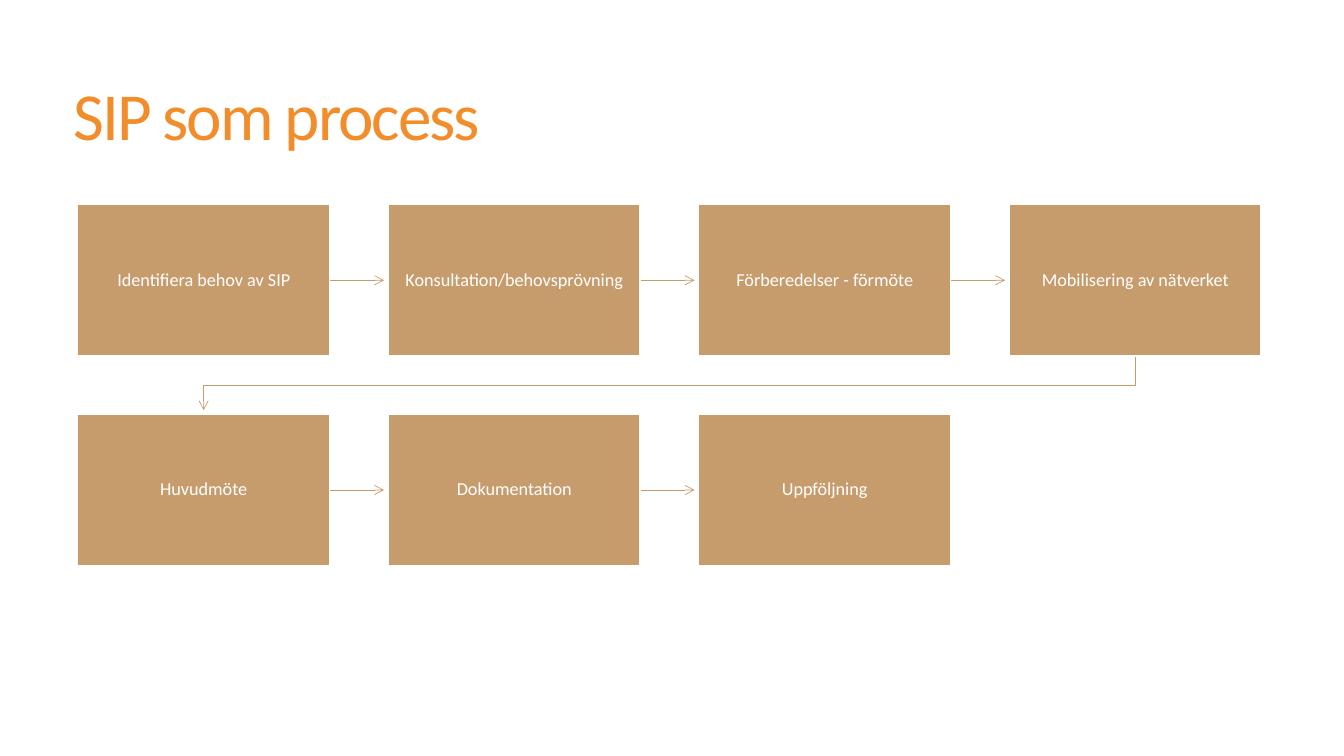
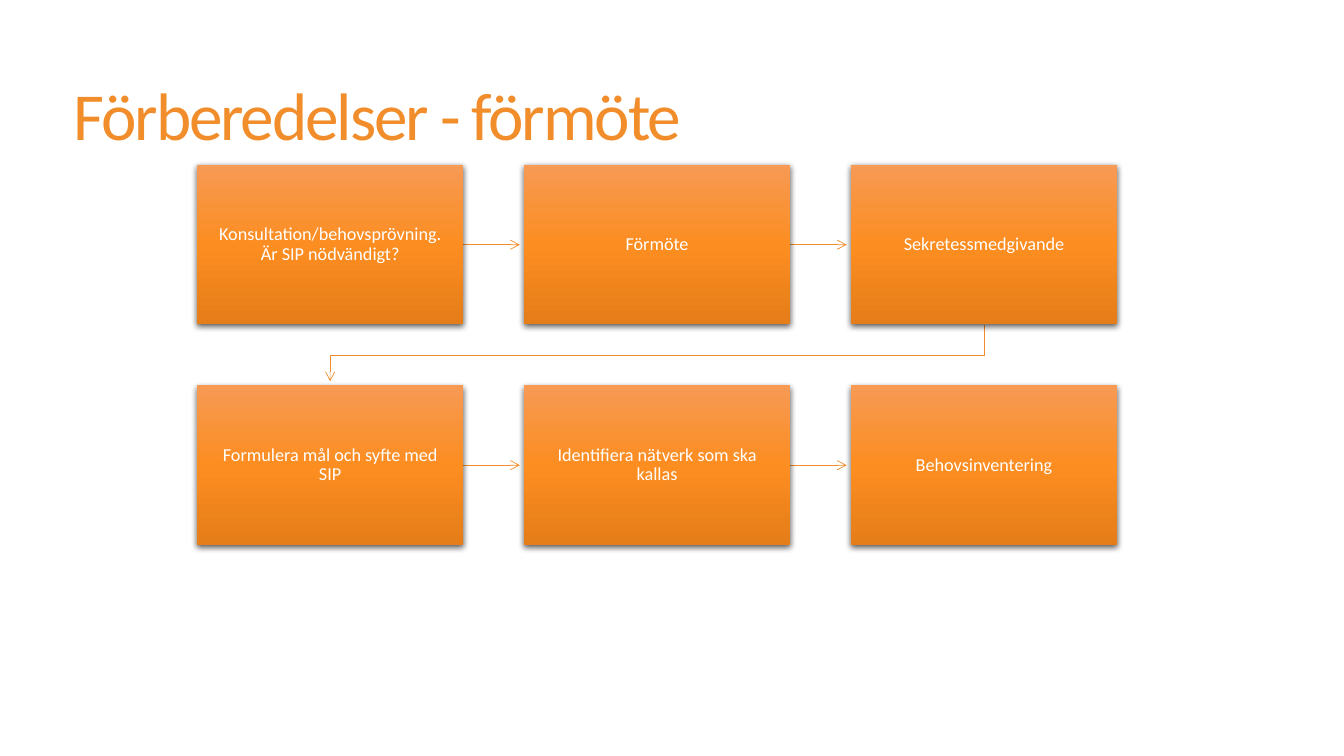
from dataclasses import dataclass

from lxml import etree
from pptx import Presentation
from pptx.dml.color import RGBColor
from pptx.enum import shapes, text
from pptx.oxml.ns import qn
from pptx.util import Pt

FONT = "Calibri"
ORANGE, TAN, WHITE = "F28D2B", "C79C6D", "FFFFFF"
ORANGE_STOPS = ((0, "F69A54"), (50, "FC8D21"), (100, "E57D18"))
ARROW_GAP = 3


@dataclass
class Grid:
    """Boxes of one size in rows of equal pitch, in points."""
    left: float
    top: float
    width: float
    height: float
    pitch_x: float
    pitch_y: float
    columns: int

    def corner(self, index):
        row, column = divmod(index, self.columns)
        return self.left + column * self.pitch_x, self.top + row * self.pitch_y


def rgb(value):
    return RGBColor.from_string(value)


def add_run(p, words, size, color):
    r = p.add_run()
    r.text = words
    r.font.name = FONT
    r.font.size = Pt(size)
    r.font.color.rgb = rgb(color)
    return r


def add_titled_slide(prs, title):
    s = prs.slides.add_slide(prs.slide_layouts[5])
    sp = s.shapes.title
    sp.left, sp.top, sp.width, sp.height = Pt(52.5), Pt(57), Pt(828), Pt(56)
    tf = sp.text_frame
    tf.margin_left = tf.margin_right = tf.margin_top = tf.margin_bottom = 0
    tf.auto_size = text.MSO_AUTO_SIZE.NONE
    tf.vertical_anchor = text.MSO_ANCHOR.MIDDLE
    p = tf.paragraphs[0]
    p.alignment = text.PP_ALIGN.LEFT
    p.line_spacing = 0.9
    r = add_run(p, title, 48, ORANGE)
    r.font._element.set("spc", "-150")
    return s


def style_arrow(sp, color):
    sp.line.color.rgb = rgb(color)
    sp.line.width = Pt(0.5)
    properties = sp._element.spPr
    etree.SubElement(properties.find(qn("a:ln")), qn("a:tailEnd"), type="arrow")
    etree.SubElement(properties, qn("a:effectLst"))


def add_straight_arrow(s, grid, index, color):
    x, y = grid.corner(index)
    middle = Pt(y + grid.height / 2)
    sp = s.shapes.add_connector(
        shapes.MSO_CONNECTOR.STRAIGHT, Pt(x + grid.width), middle,
        Pt(x + grid.pitch_x - ARROW_GAP), middle)
    style_arrow(sp, color)


def add_return_arrow(s, grid, index, color):
    """Lead from the last box of a row to the first box of the next."""
    x, y = grid.corner(index)
    next_x, next_y = grid.corner(index + 1)
    start_x, end_x = x + grid.width / 2, next_x + grid.width / 2
    bottom = y + grid.height
    middle = (bottom + next_y) / 2
    builder = s.shapes.build_freeform(Pt(start_x), Pt(bottom))
    corners = (start_x, middle), (end_x, middle), (end_x, next_y - ARROW_GAP)
    builder.add_line_segments([(Pt(a), Pt(b)) for a, b in corners], close=False)
    sp = builder.convert_to_shape()
    sp.fill.background()
    style_arrow(sp, color)


def style_flat(sp):
    sp.fill.solid()
    sp.fill.fore_color.rgb = rgb(TAN)
    sp.line.color.rgb = rgb(WHITE)
    sp.line.width = Pt(1)


def style_glossy(sp):
    """Vertical orange gradient with a soft shadow below."""
    sp.fill.gradient()
    sp.fill.gradient_angle = 270
    properties = sp._element.spPr
    stops = properties.find(qn("a:gradFill")).find(qn("a:gsLst"))
    stops.clear()
    for percent, color in ORANGE_STOPS:
        stop = etree.SubElement(stops, qn("a:gs"), pos=str(percent * 1000))
        etree.SubElement(stop, qn("a:srgbClr"), val=color)
    sp.line.fill.background()
    shadow = etree.SubElement(
        properties.find(qn("a:effectLst")), qn("a:outerShdw"),
        blurRad=str(Pt(4.5)), dist=str(Pt(1.5)), dir="5400000", rotWithShape="0")
    black = etree.SubElement(shadow, qn("a:srgbClr"), val="000000")
    etree.SubElement(black, qn("a:alpha"), val="63000")


def add_step(s, grid, index, label, style):
    x, y = grid.corner(index)
    sp = s.shapes.add_shape(shapes.MSO_SHAPE.RECTANGLE, Pt(x), Pt(y),
                            Pt(grid.width), Pt(grid.height))
    sp.shadow.inherit = False
    style(sp)
    tf = sp.text_frame
    tf.word_wrap = True
    tf.vertical_anchor = text.MSO_ANCHOR.MIDDLE
    tf.margin_left = tf.margin_right = Pt(9)
    tf.margin_top = tf.margin_bottom = Pt(9.5)
    p = tf.paragraphs[0]
    p.alignment = text.PP_ALIGN.CENTER
    p.line_spacing = 0.9
    add_run(p, label, 13, WHITE)


def add_process(s, grid, labels, style, arrow_color):
    for index in range(len(labels) - 1):
        ends_row = (index + 1) % grid.columns == 0
        add_arrow = add_return_arrow if ends_row else add_straight_arrow
        add_arrow(s, grid, index, arrow_color)
    for index, label in enumerate(labels):
        add_step(s, grid, index, label, style)


def main():
    prs = Presentation()
    prs.slide_width, prs.slide_height = Pt(960), Pt(540)

    s = add_titled_slide(prs, "SIP som process")
    add_process(s, Grid(55.5, 146.2, 180, 108, 221.8, 149.8, 4), [
        "Identifiera behov av SIP",
        "Konsultation/behovsprövning",
        "Förberedelser - förmöte",
        "Mobilisering av nätverket",
        "Huvudmöte",
        "Dokumentation",
        "Uppföljning",
    ], style_flat, TAN)

    s = add_titled_slide(prs, "Förberedelser - förmöte")
    add_process(s, Grid(140.8, 117.8, 190, 114, 233.5, 157.5, 3), [
        "Konsultation/behovsprövning. Är SIP nödvändigt?",
        "Förmöte",
        "Sekretessmedgivande",
        "Formulera mål och syfte med SIP",
        "Identifiera nätverk som ska kallas",
        "Behovsinventering",
    ], style_glossy, ORANGE)

    prs.save("out.pptx")


if __name__ == "__main__":
    main()
